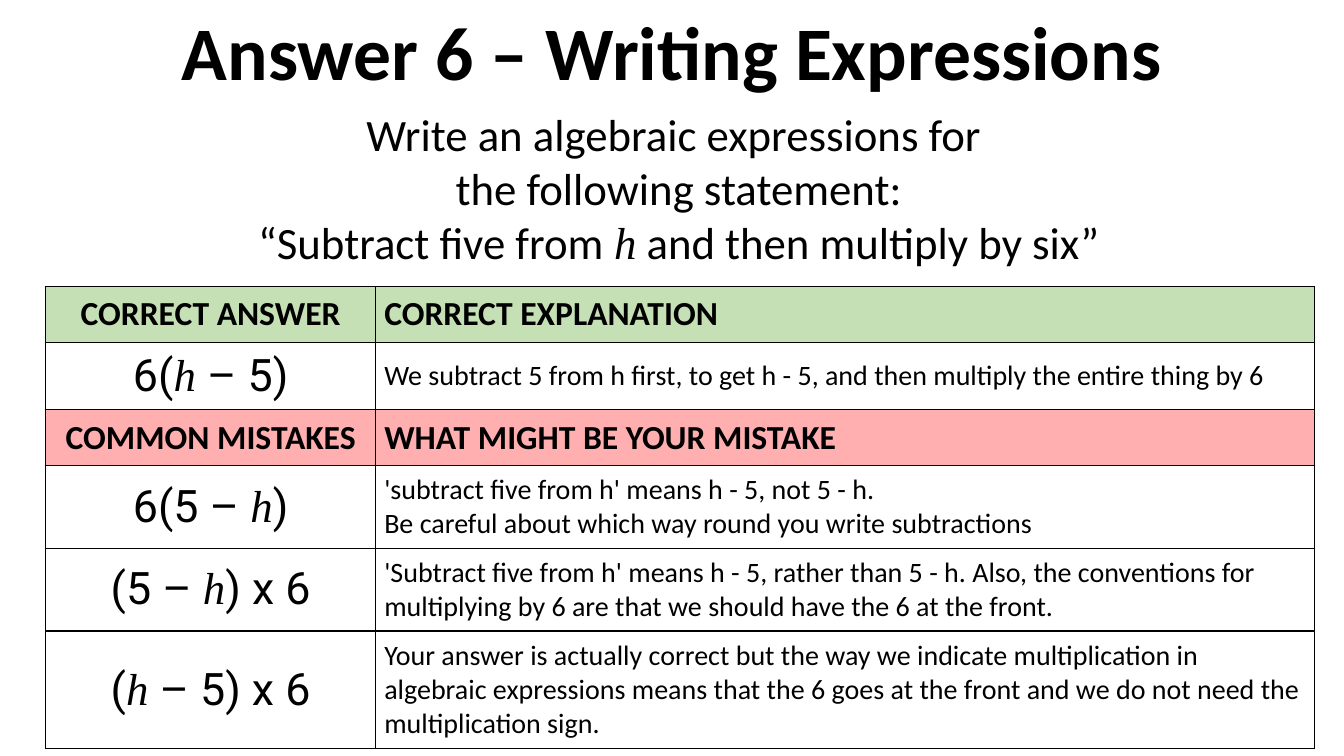
from dataclasses import dataclass

from lxml.etree import SubElement
from pptx import Presentation
from pptx.dml.color import RGBColor
from pptx.enum.text import MSO_ANCHOR, PP_ALIGN
from pptx.oxml import parse_xml
from pptx.oxml.ns import nsdecls, qn
from pptx.util import Pt

BLACK = RGBColor(0x00, 0x00, 0x00)
GREEN = RGBColor(0xC5, 0xE0, 0xB4)
PINK = RGBColor(0xFF, 0xAF, 0xAF)

SANS = "Calibri"
MATHS = "Roboto"
SERIF = "Times New Roman"


@dataclass(frozen=True)
class Style:
    size: float
    face: str = SANS
    bold: bool = False
    align: PP_ALIGN = PP_ALIGN.LEFT


@dataclass(frozen=True)
class Row:
    height: float
    answer: str
    reason: str
    fill: RGBColor | None = None


@dataclass(frozen=True)
class Box:
    left: float
    top: float
    width: float
    height: float
    text: str
    style: Style


TITLE = Style(54, bold=True, align=PP_ALIGN.CENTER)
TASK = Style(32, align=PP_ALIGN.CENTER)
HEAD_MID = Style(24, bold=True, align=PP_ALIGN.CENTER)
HEAD = Style(24, bold=True)
ANSWER = Style(32, MATHS, align=PP_ALIGN.CENTER)
REASON = Style(20)

# Text: each line is a paragraph, and *stars* mark an italic variable
BOXES = [
    Box(0, 0, 960, 72.7, "Answer 6 – Writing Expressions", TITLE),
    Box(103, 72.7, 764, 124,
        "Write an algebraic expressions for \n"
        "the following statement:\n"
        "“Subtract five from *h* and then multiply by six”", TASK),
]

ROWS = [
    Row(40, "CORRECT ANSWER", "CORRECT EXPLANATION", GREEN),
    Row(48, "6(*h* – 5)",
        "We subtract 5 from h first, to get h - 5, and then multiply "
        "the entire thing by 6"),
    Row(40, "COMMON MISTAKES", "WHAT MIGHT BE YOUR MISTAKE", PINK),
    Row(59, "6(5 – *h*)",
        "'subtract five from h' means h - 5, not 5 - h.\n"
        "Be careful about which way round you write subtractions"),
    Row(59, "(5 – *h*) x 6",
        "'Subtract five from h' means h - 5, rather than 5 - h. Also, the "
        "conventions for multiplying by 6 are that we should have the 6 at "
        "the front."),
    Row(84, "(*h* – 5) x 6",
        "Your answer is actually correct but the way we indicate "
        "multiplication in algebraic expressions means that the 6 goes at "
        "the front and we do not need the multiplication sign."),
]
COLS = (236, 670.5)


def write(frame, text: str, style: Style) -> None:
    for i, line in enumerate(text.split("\n")):
        para = frame.add_paragraph() if i else frame.paragraphs[0]
        para.alignment = style.align
        para.font.size = Pt(style.size)
        para.font.bold = style.bold
        para.font.color.rgb = BLACK
        para.font.name = style.face
        for j, part in enumerate(line.split("*")):
            run = para.add_run()
            run.text = part
            if j % 2:
                run.font.name = SERIF
                run.font.italic = True


def edge(cell) -> None:
    props = cell._tc.get_or_add_tcPr()
    for i, side in enumerate("LRTB"):
        line = parse_xml(f'<a:ln{side} {nsdecls("a")} w="{Pt(1)}"/>')
        fill = SubElement(line, qn("a:solidFill"))
        SubElement(fill, qn("a:srgbClr"), val=str(BLACK))
        props.insert(i, line)


def fill_cell(cell, text: str, style: Style, fill: RGBColor | None) -> None:
    cell.vertical_anchor = MSO_ANCHOR.MIDDLE
    cell.margin_left = cell.margin_right = Pt(6)
    cell.margin_top = cell.margin_bottom = Pt(5)
    if fill is None:
        cell.fill.background()
    else:
        cell.fill.solid()
        cell.fill.fore_color.rgb = fill
    edge(cell)
    write(cell.text_frame, text, style)


def add_grid(slide) -> None:
    high = sum(row.height for row in ROWS)
    grid = slide.shapes.add_table(
        len(ROWS), len(COLS), Pt(32.5), Pt(204.7), Pt(sum(COLS)), Pt(high)
    ).table
    grid.first_row = grid.horz_banding = False
    for col, width in zip(grid.columns, COLS):
        col.width = Pt(width)
    for i, row in enumerate(ROWS):
        grid.rows[i].height = Pt(row.height)
        styles = (HEAD_MID, HEAD) if row.fill else (ANSWER, REASON)
        for j, text in enumerate((row.answer, row.reason)):
            fill_cell(grid.cell(i, j), text, styles[j], row.fill)


def add_box(slide, box: Box) -> None:
    shape = slide.shapes.add_textbox(
        Pt(box.left), Pt(box.top), Pt(box.width), Pt(box.height))
    shape.text_frame.word_wrap = True
    write(shape.text_frame, box.text, box.style)


def main() -> None:
    deck = Presentation()
    deck.slide_width, deck.slide_height = Pt(960), Pt(540)
    slide = deck.slides.add_slide(deck.slide_layouts[6])
    # Answers and mistakes
    add_grid(slide)
    # Title and task
    for box in BOXES:
        add_box(slide, box)
    deck.save("out.pptx")


if __name__ == "__main__":
    main()
